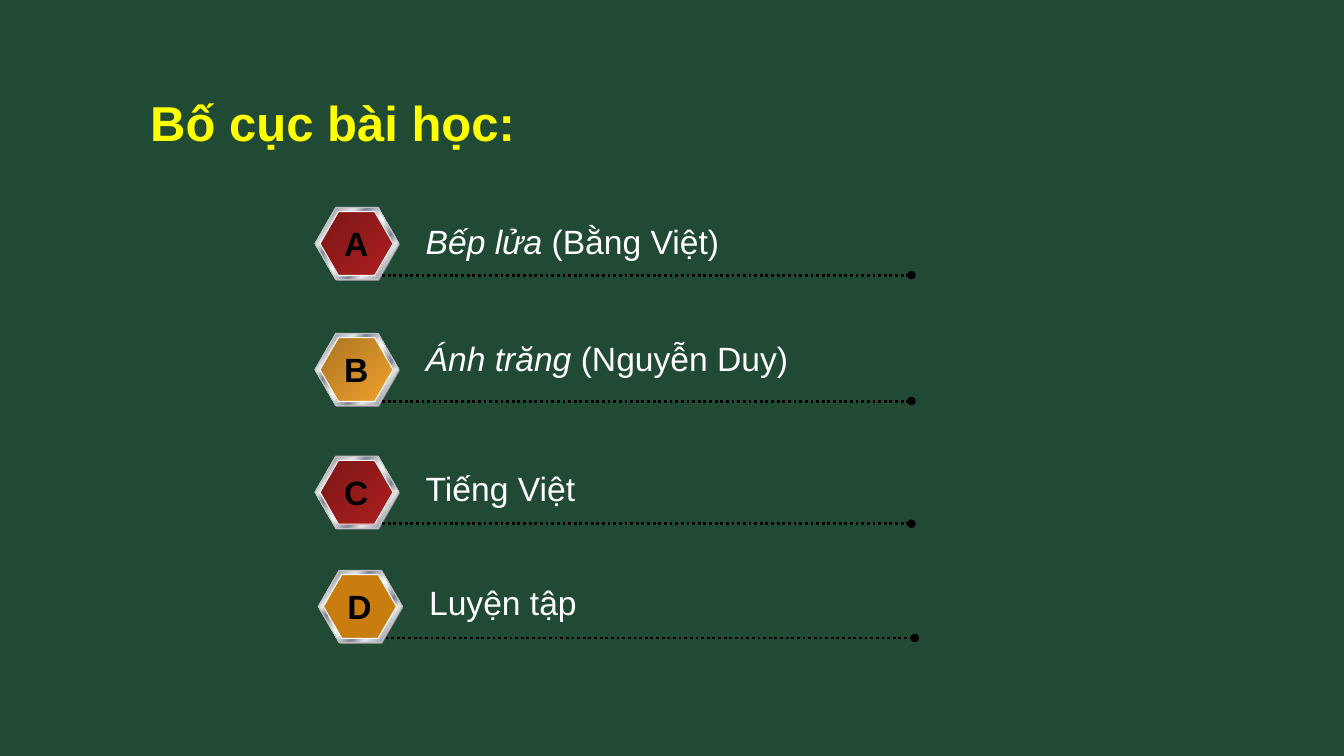
from dataclasses import dataclass

import lxml.etree
import pptx
import pptx.dml.color
import pptx.enum.dml
import pptx.enum.shapes
import pptx.enum.text
import pptx.oxml.ns
import pptx.shapes.autoshape
import pptx.shapes.shapetree
import pptx.text.text
import pptx.util

SLIDE_WIDTH, SLIDE_HEIGHT = pptx.util.Inches(13.33), pptx.util.Inches(7.5)
COLUMNS, ROWS = 160, 90
FONT = "Arial"
COLORS = {
    "board": "214A34", "title": "FFFF00", "text": "FFFFFF", "ink": "000000",
    "shade": "808080", "rim": "C0C0C0", "edge": "FFFFFF",
    "light": "E6E6E6", "steel": "7D8496", "shine": "FFFFFF",
    "dark red": "7C1616", "red": "AD1F1F",
    "dark amber": "AC7421", "amber": "F0A22E", "orange": "C87D0E",
}
Stops = tuple[tuple[int, str], ...]
METAL: Stops = (
    (0, "light"), (7, "steel"), (26, "light"), (34, "steel"), (46, "light"),
    (50, "shine"), (54, "light"), (66, "steel"), (74, "light"),
    (93, "steel"), (100, "light"),
)
RED: Stops = ((0, "dark red"), (100, "red"))
AMBER: Stops = ((0, "dark amber"), (100, "amber"))
ORANGE: Stops = ((0, "orange"),)
SHADE: Stops = ((0, "shade"),)


@dataclass(frozen=True)
class Area:
    column: float
    row: float
    width: float
    height: float

    def emu(self) -> tuple[int, int, int, int]:
        return (across(self.column), down(self.row),
                across(self.width), down(self.height))


@dataclass(frozen=True)
class Span:
    text: str
    italic: bool = False


@dataclass(frozen=True)
class Section:
    letter: str
    spans: tuple[Span, ...]
    face: Stops
    column: float
    row: float
    label_drop: float
    label_width: float


SECTIONS = (
    Section("A", (Span("Bếp lửa ", True), Span("(Bằng Việt)")), RED, 37.5, 24.7, 1, 37.7),
    Section("B", (Span("Ánh trăng ", True), Span("(Nguyễn Duy)")), AMBER, 37.5, 39.7, -0.1, 46.1),
    Section("C", (Span("Tiếng Việt"),), RED, 37.5, 54.3, 0.8, 20.5),
    Section("D", (Span("Luyện tập"),), ORANGE, 37.9, 67.9, 0.75, 20.2),
)


def across(columns: float) -> int:
    return round(SLIDE_WIDTH * columns / COLUMNS)


def down(rows: float) -> int:
    return round(SLIDE_HEIGHT * rows / ROWS)


def color(name: str) -> pptx.dml.color.RGBColor:
    return pptx.dml.color.RGBColor.from_string(COLORS[name])


def paint(shape: pptx.shapes.autoshape.Shape, stops: Stops) -> None:
    if len(stops) == 1:
        shape.fill.solid()
        shape.fill.fore_color.rgb = color(stops[0][1])
        return
    shape.fill.gradient()
    shape.fill.gradient_angle = 315
    qn = pptx.oxml.ns.qn
    stop_list = shape._element.spPr.find(".//" + qn("a:gsLst"))
    for old_stop in list(stop_list):
        stop_list.remove(old_stop)
    for percent, name in stops:
        stop = lxml.etree.SubElement(stop_list, qn("a:gs"), pos=str(percent * 1000))
        lxml.etree.SubElement(stop, qn("a:srgbClr"), val=COLORS[name])


def add_hexagon(shapes: pptx.shapes.shapetree.GroupShapes, area: Area,
                stops: Stops, outline: str | None) -> None:
    hexagon = shapes.add_shape(pptx.enum.shapes.MSO_SHAPE.HEXAGON, *area.emu())
    hexagon.adjustments[0] = 0.289
    hexagon.shadow.inherit = False
    paint(hexagon, stops)
    if outline is None:
        hexagon.line.fill.background()
    else:
        hexagon.line.color.rgb = color(outline)
        hexagon.line.width = pptx.util.Pt(0.75)


def add_dotted_line(shapes: pptx.shapes.shapetree.GroupShapes,
                    start: float, end: float, row: float) -> None:
    rule = shapes.add_connector(pptx.enum.shapes.MSO_CONNECTOR.STRAIGHT,
                                across(start), down(row), across(end), down(row))
    rule.line.color.rgb = color("ink")
    rule.line.width = pptx.util.Pt(2)
    rule.line.dash_style = pptx.enum.dml.MSO_LINE.ROUND_DOT
    qn = pptx.oxml.ns.qn
    properties = rule._element.spPr
    lxml.etree.SubElement(properties.find(qn("a:ln")), qn("a:tailEnd"), type="oval")
    lxml.etree.SubElement(properties, qn("a:effectLst"))


def add_text(shapes: pptx.shapes.shapetree.GroupShapes, area: Area,
             spans: tuple[Span, ...], size: float, name: str,
             bold: bool = False, wrap: bool = False) -> pptx.text.text.TextFrame:
    frame = shapes.add_textbox(*area.emu()).text_frame
    frame.word_wrap = wrap
    if not wrap:
        frame.auto_size = pptx.enum.text.MSO_AUTO_SIZE.SHAPE_TO_FIT_TEXT
    para = frame.paragraphs[0]
    para.font.name = FONT
    para.font.size = pptx.util.Pt(size)
    para.font.bold = bold
    para.font.color.rgb = color(name)
    for span in spans:
        run = para.add_run()
        run.text = span.text
        if span.italic:
            run.font.italic = True
    return frame


def add_section(shapes: pptx.shapes.shapetree.SlideShapes, section: Section) -> None:
    group = shapes.add_group_shape().shapes
    left, top = section.column, section.row
    add_hexagon(group, Area(left + 0.1, top + 0.15, 10, 8.6), SHADE, None)
    add_hexagon(group, Area(left, top, 10, 8.6), METAL, "rim")
    add_hexagon(group, Area(left + 0.6, top + 0.5, 8.7, 7.6), section.face, "edge")
    add_dotted_line(group, left + 8, left + 71, top + 8.05)
    add_text(group, Area(left + 12, top + section.label_drop, section.label_width, 6.1),
             section.spans, 24, "text")
    letter = add_text(group, Area(left + 2.2, top + 1.3, 5.4, 6.1),
                      (Span(section.letter),), 24, "ink", bold=True)
    letter.paragraphs[0].alignment = pptx.enum.text.PP_ALIGN.CENTER


def main() -> None:
    deck = pptx.Presentation()
    deck.slide_width, deck.slide_height = SLIDE_WIDTH, SLIDE_HEIGHT
    page = deck.slides.add_slide(deck.slide_layouts[6])
    page.background.fill.solid()
    page.background.fill.fore_color.rgb = color("board")
    title = add_text(page.shapes, Area(16.7, 6.2, 138, 17.4),
                     (Span("Bố cục bài học:"),), 35, "title", bold=True, wrap=True)
    title.vertical_anchor = pptx.enum.text.MSO_ANCHOR.MIDDLE
    title.paragraphs[0].line_spacing = 0.9
    for section in SECTIONS:
        add_section(page.shapes, section)
    deck.save("out.pptx")


if __name__ == "__main__":
    main()
